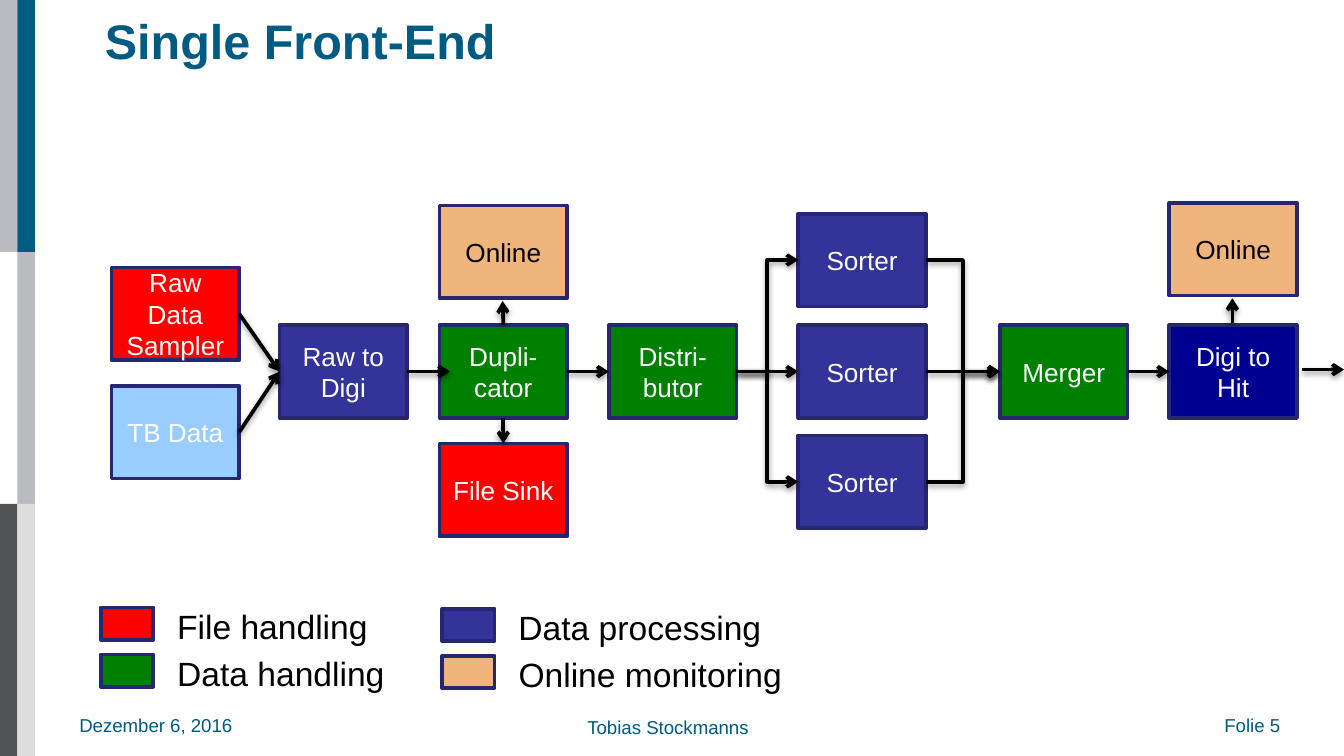
"""Build the single front-end data flow slide."""
import dataclasses
import typing

import pptx
import pptx.dml.color
import pptx.enum.shapes
import pptx.enum.text
import pptx.oxml
import pptx.oxml.ns
import pptx.util

Inches = pptx.util.Inches
Pt = pptx.util.Pt
RGBColor = pptx.dml.color.RGBColor
Kind = pptx.enum.shapes.MSO_CONNECTOR
Align = pptx.enum.text.PP_ALIGN
Anchor = pptx.enum.text.MSO_ANCHOR
Fit = pptx.enum.text.MSO_AUTO_SIZE

WHITE = RGBColor(0xFF, 0xFF, 0xFF)
BLACK = RGBColor(0x00, 0x00, 0x00)
TEAL = RGBColor(0x00, 0x5B, 0x82)
GREY = RGBColor(0xB9, 0xBB, 0xC0)
DARK = RGBColor(0x51, 0x53, 0x55)
PALE = RGBColor(0xDC, 0xDC, 0xDC)
RED = RGBColor(0xFF, 0x00, 0x00)
GREEN = RGBColor(0x00, 0x80, 0x00)
BLUE = RGBColor(0x33, 0x33, 0x99)
NAVY = RGBColor(0x00, 0x00, 0x90)
SKY = RGBColor(0x99, 0xCC, 0xFF)
PEACH = RGBColor(0xF0, 0xB4, 0x7D)
EDGE = RGBColor(0x26, 0x26, 0x71)

PAGE_W = 10
PAGE_H = PAGE_W * 9 / 16
BAND = PAGE_H / 3
WIDE, HIGH, ROW = 0.95, 0.69, 2.42
MID = ROW + HIGH / 2
TOP, LEFT, BOTTOM, RIGHT = range(4)
FLUSH = dict.fromkeys(
    ("margin_left", "margin_right", "margin_top", "margin_bottom"), 0)
SHADE = (
    f'<a:effectLst {pptx.oxml.ns.nsdecls("a")}>'
    '<a:outerShdw blurRad="40000" dist="20000" dir="5400000" rotWithShape="0">'
    '<a:srgbClr val="000000"><a:alpha val="38000"/></a:srgbClr>'
    '</a:outerShdw></a:effectLst>')
HEAD = f'<a:tailEnd {pptx.oxml.ns.nsdecls("a")} type="arrow"/>'

End = tuple[typing.Union[str, float], float]


@dataclasses.dataclass
class Box:
    text: str
    x: float
    y: float
    fill: RGBColor
    ink: RGBColor = WHITE


@dataclasses.dataclass
class Link:
    start: End
    stop: End
    kind: typing.Any = Kind.STRAIGHT


@dataclasses.dataclass
class Label:
    text: str
    x: float
    y: float
    w: float
    h: float
    form: dict


BOXES = {
    "raw": Box("Raw Data Sampler", 0.83, 1.99, RED),
    "beam": Box("TB Data", 0.83, 2.87, SKY),
    "digi": Box("Raw to Digi", 2.08, ROW, BLUE),
    "dupe": Box("Dupli-cator", 3.27, ROW, GREEN),
    "sink": Box("File Sink", 3.27, 3.3, RED),
    "watch": Box("Online", 3.27, 1.53, PEACH, BLACK),
    "split": Box("Distri-butor", 4.53, ROW, GREEN),
    "sort0": Box("Sorter", 5.94, ROW - 0.83, BLUE),
    "sort1": Box("Sorter", 5.94, ROW, BLUE),
    "sort2": Box("Sorter", 5.94, 3.24, BLUE),
    "merge": Box("Merger", 7.44, ROW, GREEN),
    "hit": Box("Digi to Hit", 8.7, ROW, NAVY),
    "check": Box("Online", 8.7, 1.51, PEACH, BLACK),
}
LINKS = [
    Link(("raw", RIGHT), ("digi", LEFT)),
    Link(("beam", RIGHT), ("digi", LEFT)),
    Link(("digi", RIGHT), (3.35, MID)),
    Link(("dupe", RIGHT), ("split", LEFT)),
    Link(("dupe", TOP), (3.74, 2.24)),
    Link(("dupe", BOTTOM), ("sink", TOP)),
    Link(("merge", RIGHT), ("hit", LEFT)),
    Link((9.17, 2.4), (9.17, 2.22)),
    Link((9.69, 2.75), (PAGE_W, 2.75)),
]
for name, kind in (("sort0", Kind.ELBOW), ("sort1", Kind.STRAIGHT),
                   ("sort2", Kind.ELBOW)):
    LINKS += [Link(("split", RIGHT), (name, LEFT), kind),
              Link((name, RIGHT), ("merge", LEFT), kind)]

KEYS = [
    ("File handling", RED, 0.75, 4.52, 1.63),
    ("Data handling", GREEN, 0.75, 4.87, 1.76),
    ("Data processing", BLUE, 3.29, 4.53, 2.03),
    ("Online monitoring", PEACH, 3.29, 4.88, 2.18),
]
NOTES = [
    Label("Dezember 6, 2016", 0.59, 5.31, 1.27, 0.17, FLUSH),
    Label("Tobias Stockmanns", 4.37, 5.33, 1.22, 0.17, FLUSH),
    Label("Folie 5", 9.11, 5.31, 0.62, 0.17, FLUSH),
]


def dress(item: typing.Any, form: dict) -> None:
    for key, value in form.items():
        setattr(item, key, value)


def write(shape: typing.Any, text: str, size: float, ink: RGBColor,
          form: dict, align: typing.Any = Align.LEFT,
          bold: bool = False) -> None:
    frame = shape.text_frame
    frame.text = text
    dress(frame, form)
    line = frame.paragraphs[0]
    line.alignment = align
    dress(line.font, {"name": "Arial", "size": Pt(size), "bold": bold})
    line.font.color.rgb = ink


def block(slide: typing.Any, x: float, y: float, w: float, h: float,
          fill: RGBColor, edge: bool = True) -> typing.Any:
    shape = slide.shapes.add_shape(
        pptx.enum.shapes.MSO_SHAPE.RECTANGLE, *map(Inches, (x, y, w, h)))
    shape.shadow.inherit = False
    shape.fill.solid()
    shape.fill.fore_color.rgb = fill
    if edge:
        shape.line.color.rgb = EDGE
        shape.line.width = Pt(2)
    else:
        shape.line.fill.background()
    return shape


def node(slide: typing.Any, box: Box) -> typing.Any:
    shape = block(slide, box.x, box.y, WIDE, HIGH, box.fill)
    form = {"word_wrap": True, "vertical_anchor": Anchor.MIDDLE}
    write(shape, box.text, 14, box.ink, form, Align.CENTER)
    return shape


def spot(end: End) -> tuple[float, float]:
    if not isinstance(end[0], str):
        return end
    box = BOXES[end[0]]
    dx, dy = ((0.5, 0), (0, 0.5), (0.5, 1), (1, 0.5))[end[1]]
    return box.x + dx * WIDE, box.y + dy * HIGH


def arrow(slide: typing.Any, link: Link, nodes: dict) -> None:
    ends = (*spot(link.start), *spot(link.stop))
    line = slide.shapes.add_connector(link.kind, *map(Inches, ends))
    for end, join in ((link.start, line.begin_connect),
                      (link.stop, line.end_connect)):
        if isinstance(end[0], str):
            join(nodes[end[0]], end[1])
    line.line.color.rgb = BLACK
    line.line.width = Pt(2)
    props = line.element.spPr
    props.find(pptx.oxml.ns.qn("a:ln")).append(pptx.oxml.parse_xml(HEAD))
    props.append(pptx.oxml.parse_xml(SHADE))


def label(slide: typing.Any, note: Label, size: float, ink: RGBColor) -> None:
    area = map(Inches, (note.x, note.y, note.w, note.h))
    form = {"word_wrap": False, "auto_size": Fit.SHAPE_TO_FIT_TEXT, **note.form}
    write(slide.shapes.add_textbox(*area), note.text, size, ink, form)


def main() -> None:
    deck = pptx.Presentation()
    dress(deck, {"slide_width": Inches(PAGE_W), "slide_height": Inches(PAGE_H)})
    slide = deck.slides.add_slide(deck.slide_layouts[5])
    for x, fills in ((0, (GREY, None, DARK)), (0.13, (TEAL, GREY, PALE))):
        for row, fill in enumerate(fills):
            if fill is not None:
                block(slide, x, row * BAND, 0.13, BAND, fill, False)
    title = slide.shapes.title
    dress(title, {"left": Inches(0.78), "top": Inches(0.06),
                  "width": Inches(7.27), "height": Inches(0.47)})
    form = {"vertical_anchor": Anchor.MIDDLE, "auto_size": Fit.NONE, **FLUSH}
    write(title, "Single Front-End", 26, TEAL, form, bold=True)
    nodes = {name: node(slide, box) for name, box in BOXES.items()}
    for link in LINKS:
        arrow(slide, link, nodes)
    for text, fill, x, y, w in KEYS:
        block(slide, x, y, 0.39, 0.24, fill)
        label(slide, Label(text, x + 0.47, y - 0.06, w, 0.4, {}), 18, BLACK)
    for note in NOTES:
        label(slide, note, 10, TEAL)
    deck.save("out.pptx")


if __name__ == "__main__":
    main()
